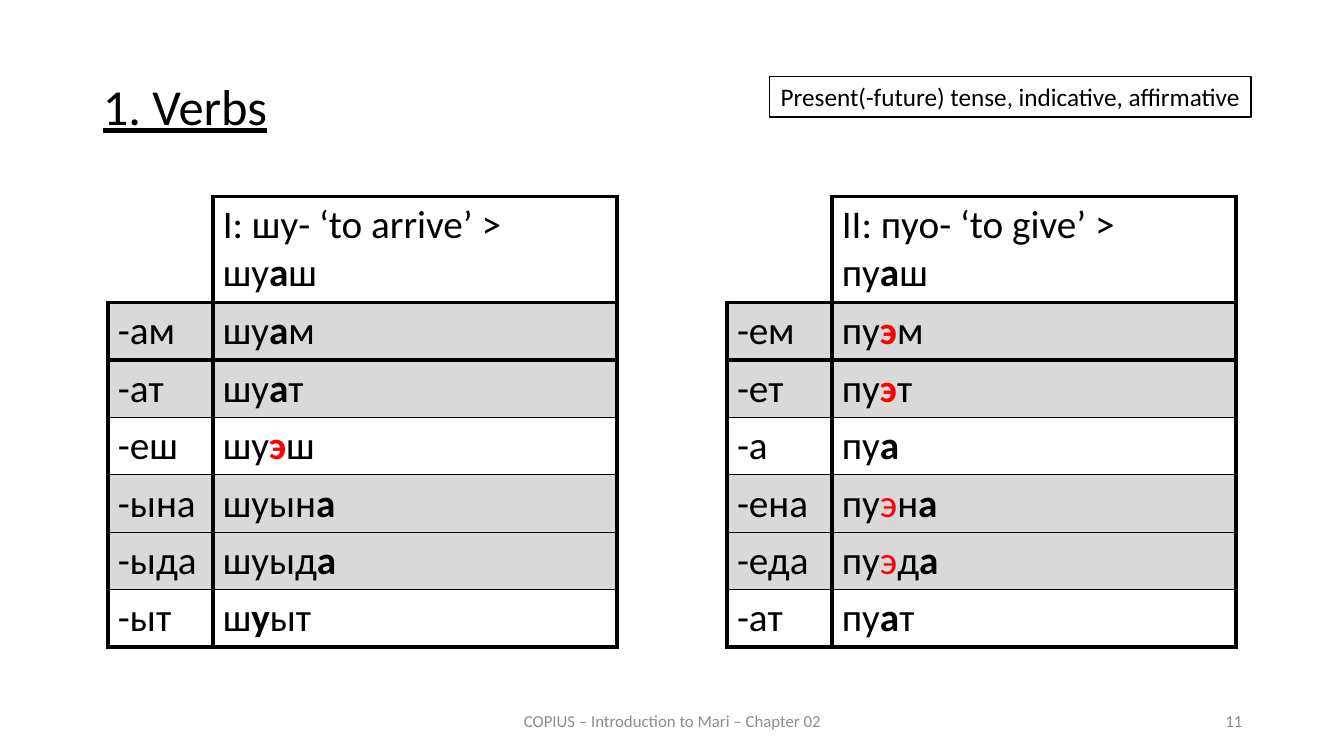
from lxml import etree
from pptx import Presentation
from pptx.dml.color import RGBColor
from pptx.enum import shapes, text
from pptx.oxml import ns
from pptx.util import Inches, Pt

BLACK = RGBColor(0, 0, 0)
WHITE = RGBColor(255, 255, 255)
RED = RGBColor(255, 0, 0)
BAND = RGBColor(0xD9, 0xD9, 0xD9)
GRAY = RGBColor(0x8C, 0x8C, 0x8C)
FONT = "Calibri"
THICK, THIN = 3, 1
SHADED = {1, 2, 4, 5}

# Leading mark of a piece: (bold, colour)
MARKS = {"*": (True, BLACK), "!": (True, RED), "~": (False, RED)}

ARRIVE = [
    ("", "I: шу- ‘to arrive’ >\nшу|*а|ш"),
    ("-ам", "шу|*а|м"),
    ("-ат", "шу|*а|т"),
    ("-еш", "шу|!э|ш"),
    ("-ына", "шуын|*а"),
    ("-ыда", "шуыд|*а"),
    ("-ыт", "ш|*у|ыт"),
]
GIVE = [
    ("", "II: пуо- ‘to give’ >\nпу|*а|ш"),
    ("-ем", "пу|!э|м"),
    ("-ет", "пу|!э|т"),
    ("-а", "пу|*а"),
    ("-ена", "пу|~э|н|*а"),
    ("-еда", "пу|~э|д|*а"),
    ("-ат", "пу|*а|т"),
]


def add_run(para, words, size, color=BLACK, bold=False):
    run = para.add_run()
    run.text = words
    font = run.font
    font.name, font.size, font.bold = FONT, Pt(size), bold
    font.color.rgb = color
    return run


def add_title(slide, words):
    title = slide.shapes.title
    title.left, title.top = Inches(0.92), Inches(0.76)
    title.width, title.height = Inches(6), Inches(0.7)
    frame = title.text_frame
    frame.vertical_anchor = text.MSO_ANCHOR.TOP
    para = frame.paragraphs[0]
    para.alignment = text.PP_ALIGN.LEFT
    para.line_spacing = 0.9
    add_run(para, words, 36).font.underline = True


def add_foot(slide, words, left, width, align):
    box = slide.shapes.add_textbox(
        Inches(left), Inches(6.95), Inches(width), Inches(0.4))
    frame = box.text_frame
    frame.word_wrap = True
    frame.vertical_anchor = text.MSO_ANCHOR.MIDDLE
    frame.paragraphs[0].alignment = align
    add_run(frame.paragraphs[0], words, 12, GRAY)


def add_label(slide, words):
    box = slide.shapes.add_shape(
        shapes.MSO_SHAPE.RECTANGLE,
        Inches(7.63), Inches(0.76), Inches(4.78), Inches(0.4))
    box.shadow.inherit = False
    box.fill.solid()
    box.fill.fore_color.rgb = WHITE
    box.line.color.rgb = BLACK
    box.line.width = Pt(1)
    frame = box.text_frame
    frame.word_wrap = False
    frame.paragraphs[0].alignment = text.PP_ALIGN.CENTER
    add_run(frame.paragraphs[0], words, 18)


def set_edges(cell, edges):
    """Draw cell borders from widths in points; zero hides a border."""
    props = cell._tc.get_or_add_tcPr()
    for place, side in enumerate("LRTB"):
        line = etree.Element(ns.qn(f"a:ln{side}"))
        if edges[side]:
            line.set("w", str(Pt(edges[side])))
            fill = etree.SubElement(line, ns.qn("a:solidFill"))
            etree.SubElement(fill, ns.qn("a:srgbClr"), val=str(BLACK))
        else:
            etree.SubElement(line, ns.qn("a:noFill"))
        props.insert(place, line)


def fill_cell(cell, words):
    """Write lines of pieces parted by bars, each styled by its mark."""
    frame = cell.text_frame
    for row, line in enumerate(words.split("\n")):
        para = frame.add_paragraph() if row else frame.paragraphs[0]
        for piece in filter(None, line.split("|")):
            bold, color = MARKS.get(piece[0], (False, BLACK))
            add_run(para, piece.lstrip("*!~"), 28, color, bold)


def add_verb(slide, left, forms):
    last = len(forms) - 1
    table = slide.shapes.add_table(
        len(forms), 2, Inches(left), Inches(1.95),
        Inches(5.05), Inches(4.47)).table
    table.first_row = table.horz_banding = False
    for col, width in zip(table.columns, (1.04, 4.01)):
        col.width = Inches(width)
    for r, pair in enumerate(forms):
        table.rows[r].height = Inches(0.57 if r else 1.05)
        for c, words in enumerate(pair):
            cell = table.cell(r, c)
            fill_cell(cell, words)
            if r in SHADED:
                cell.fill.solid()
                cell.fill.fore_color.rgb = BAND
            else:
                cell.fill.background()
            blank = not words
            set_edges(cell, {
                "L": 0 if blank else THICK,
                "R": THICK,
                "T": 0 if blank else THICK if r < 3 else THIN,
                "B": THICK if r < 2 or r == last else THIN,
            })


def main():
    deck = Presentation()
    deck.slide_width, deck.slide_height = Inches(13.33), Inches(7.5)
    slide = deck.slides.add_slide(deck.slide_layouts[5])
    add_title(slide, "1. Verbs")
    add_foot(slide, "COPIUS – Introduction to Mari – Chapter 02",
             4.42, 4.5, text.PP_ALIGN.CENTER)
    add_foot(slide, "11", 9.42, 3, text.PP_ALIGN.RIGHT)
    add_verb(slide, 1.07, ARRIVE)
    add_verb(slide, 7.21, GIVE)
    add_label(slide, "Present(-future) tense, indicative, affirmative")
    deck.save("out.pptx")


if __name__ == "__main__":
    main()
